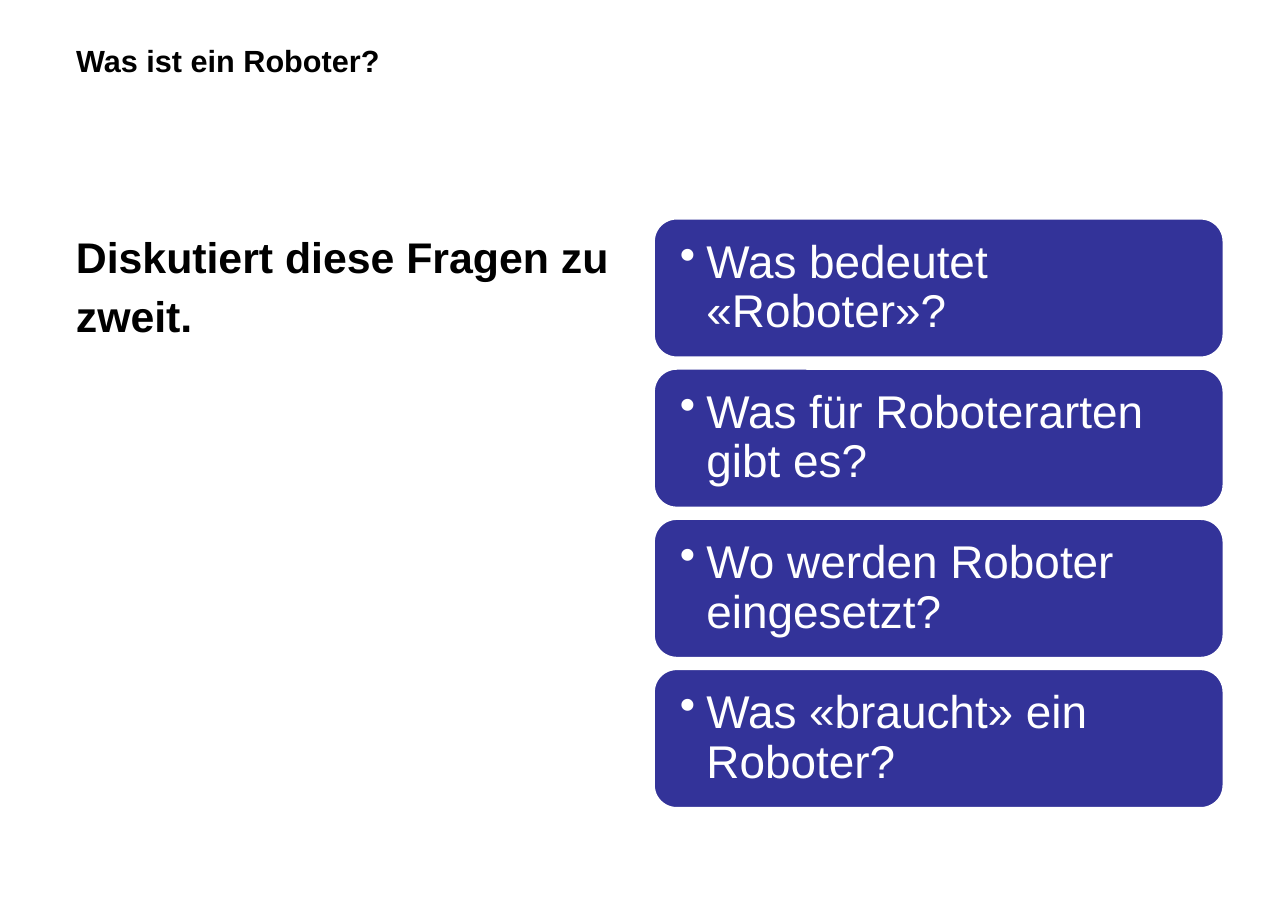
import pptx
import pptx.dml.color
import pptx.enum.shapes
import pptx.enum.text
import pptx.util
from lxml import etree
from pptx.util import Inches, Pt

QUESTIONS = [
    "Was bedeutet «Roboter»?",
    "Was für Roboterarten gibt es?",
    "Wo werden Roboter eingesetzt?",
    "Was «braucht» ein Roboter?",
]
TOP, BOTTOM, CARD_HEIGHT = 1.98, 7.34, 1.27
PITCH = (BOTTOM - TOP - CARD_HEIGHT) / (len(QUESTIONS) - 1)


def rgb(color):
    return pptx.dml.color.RGBColor.from_string(color)


def write(tf, text, size, color, bold, anchor):
    """Fill a text frame with one left-aligned paragraph and return it."""
    tf.word_wrap = True
    tf.auto_size = pptx.enum.text.MSO_AUTO_SIZE.NONE
    tf.vertical_anchor = anchor
    p = tf.paragraphs[0]
    p.text = text
    p.alignment = pptx.enum.text.PP_ALIGN.LEFT
    p.font.name = "Arial"
    p.font.size = Pt(size)
    p.font.bold = bold
    p.font.color.rgb = rgb(color)
    return p


prs = pptx.Presentation()
prs.slide_width = Inches(11.69)
prs.slide_height = Inches(8.27)
s = prs.slides.add_slide(prs.slide_layouts[5])
anchors = pptx.enum.text.MSO_ANCHOR

title = s.shapes.title
title.left, title.top = Inches(0.59), Inches(0.33)
title.width, title.height = Inches(10.52), Inches(1.38)
write(title.text_frame, "Was ist ein Roboter?", 20, "000000", True, anchors.TOP)

task = s.shapes.add_textbox(Inches(0.59), Inches(1.93), Inches(5.18), Inches(5.46))
p = write(task.text_frame, "Diskutiert diese Fragen zu zweit.", 28, "000000", True, anchors.TOP)
p.line_spacing = 1.15
task.text_frame.margin_top = Inches(0.09)

for i, question in enumerate(QUESTIONS):
    card = s.shapes.add_shape(
        pptx.enum.shapes.MSO_SHAPE.ROUNDED_RECTANGLE,
        Inches(5.93), Inches(TOP + i * PITCH), Inches(5.18), Inches(CARD_HEIGHT))
    card.shadow.inherit = False
    card.fill.solid()
    card.fill.fore_color.rgb = rgb("333399")
    card.line.color.rgb = rgb("FFFFFF")
    card.line.width = Pt(2)
    tf = card.text_frame
    tf.margin_left = tf.margin_right = Inches(0.18)
    tf.margin_top = tf.margin_bottom = Inches(0.12)
    p = write(tf, question, 30, "FFFFFF", False, anchors.MIDDLE)
    p.line_spacing = 0.9
    pPr = p._p.get_or_add_pPr()
    pPr.set("marL", str(Inches(0.24)))
    pPr.set("indent", str(Inches(-0.24)))
    bullet = etree.Element(pptx.oxml.ns.qn("a:buChar"), char="•")
    pPr.find(pptx.oxml.ns.qn("a:lnSpc")).addnext(bullet)

prs.save("out.pptx")
